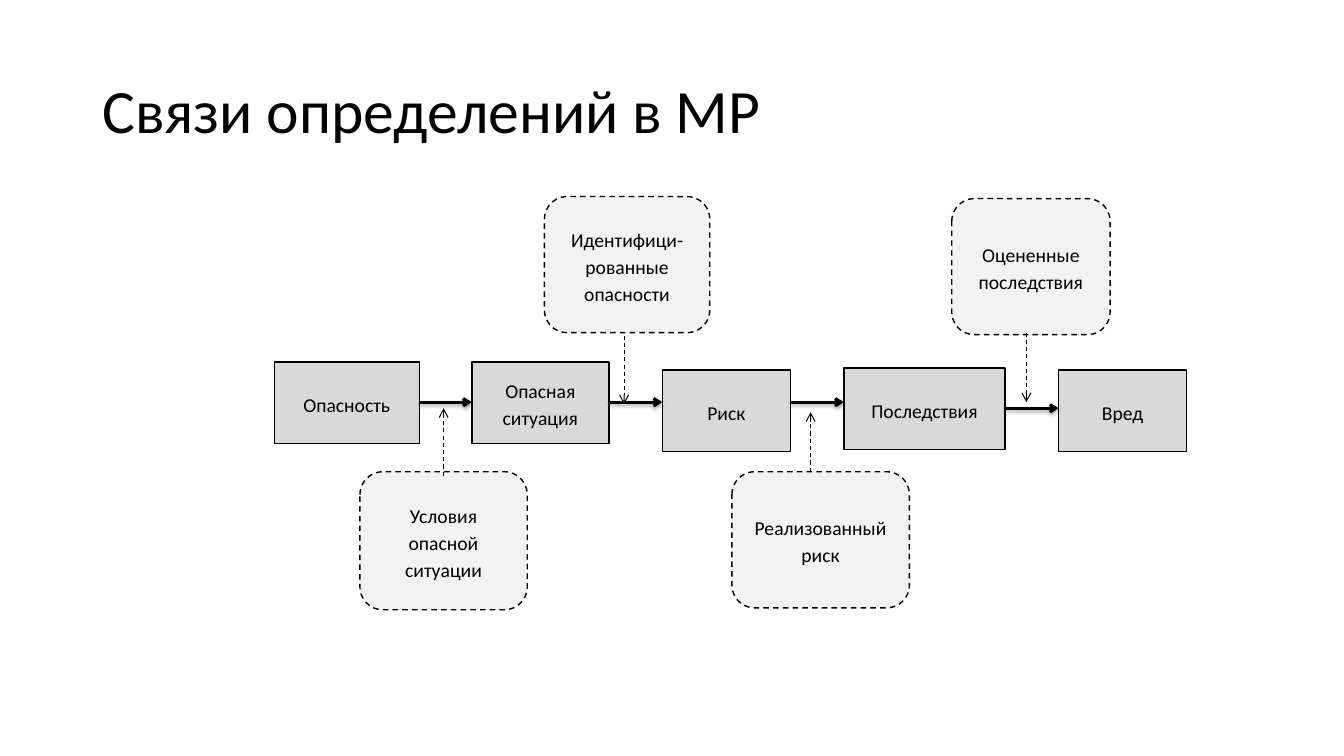
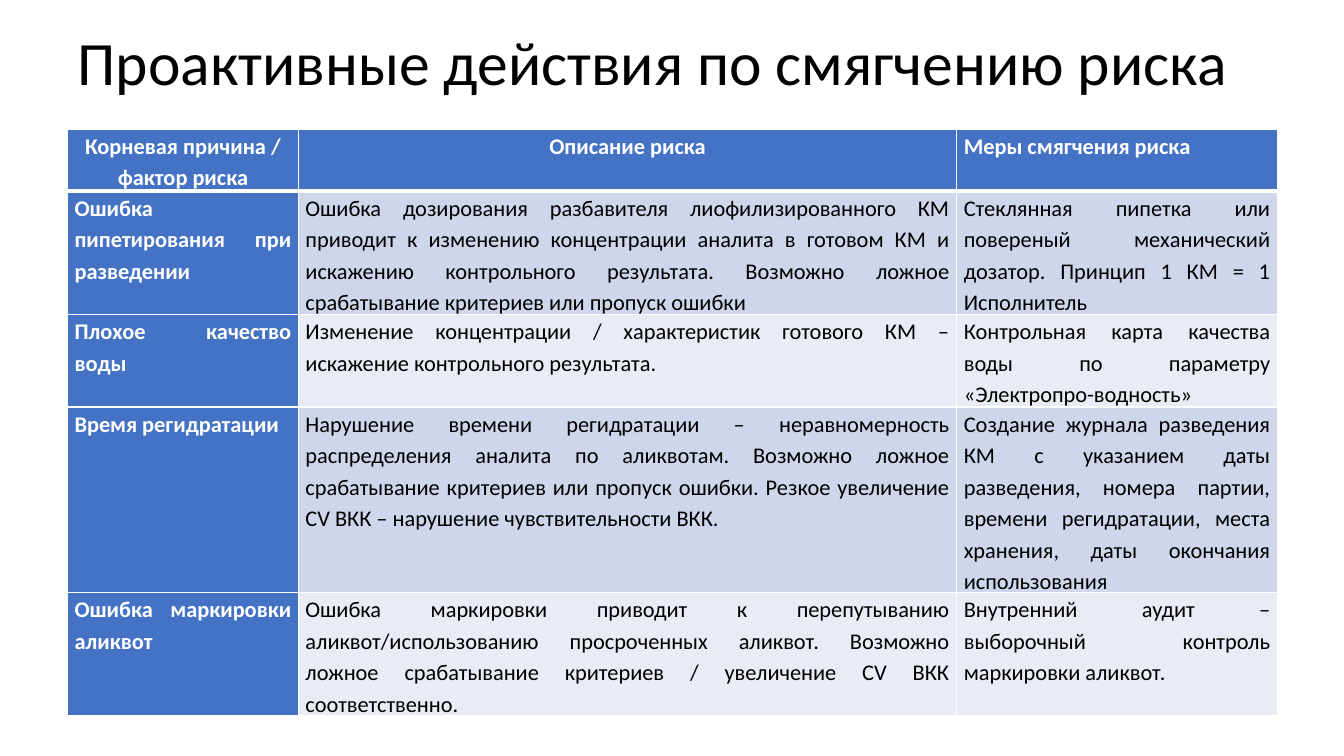
"""Build two slides on risk management: a concept diagram and a mitigation table."""
from itertools import pairwise

from lxml import etree
from pptx import Presentation
from pptx.dml.color import RGBColor
from pptx.enum.dml import MSO_LINE
from pptx.enum.shapes import MSO_CONNECTOR, MSO_SHAPE
from pptx.enum.text import MSO_ANCHOR, PP_ALIGN
from pptx.oxml.ns import qn
from pptx.util import Emu, Pt

RECT, ROUND = MSO_SHAPE.RECTANGLE, MSO_SHAPE.ROUNDED_RECTANGLE
STRAIGHT, DASH = MSO_CONNECTOR.STRAIGHT, MSO_LINE.DASH
MIDDLE, CENTER, JUSTIFY = MSO_ANCHOR.MIDDLE, PP_ALIGN.CENTER, PP_ALIGN.JUSTIFY

FONT = "Calibri"
BLACK, WHITE = "000000", "FFFFFF"
STEP_FILL, NOTE_FILL = "D9D9D9", "F2F2F2"
HEAD_FILL, BANDS = "4472C4", ("CFD5EA", "E9EBF5")

STEP_HEIGHT = 81
STEPS = [
    ("Опасность", 272, 359, 144),
    ("Опасная ситуация", 468, 359, 136),
    ("Риск", 657, 367, 127),
    ("Последствия", 837, 365, 160),
    ("Вред", 1050, 367, 127),
]
FLOW_Y = (399, 399, 399, 405)
NOTES = [
    ("Условия опасной ситуации", (357, 468, 166, 137), (440, 472, 405)),
    ("Идентифици-рованные опасности", (540, 195, 164, 135), (619, 333, 401)),
    ("Реализованный риск", (726, 468, 176, 135), (804, 468, 409)),
    ("Оцененные последствия", (944, 197, 157, 135), (1018, 330, 399)),
]

COLUMNS = (229, 653, 318)
ROW_HEIGHTS = (60, 121, 91, 183, 121)
RISKS = [
    ("Корневая причина / фактор риска", "Описание риска", "Меры смягчения риска"),
    ("Ошибка пипетирования при разведении",
     "Ошибка дозирования разбавителя лиофилизированного КМ приводит к изменению "
     "концентрации аналита в готовом КМ и искажению контрольного результата. "
     "Возможно ложное срабатывание критериев или пропуск ошибки",
     "Стеклянная пипетка или повереный механический дозатор. "
     "Принцип 1 КМ = 1 Исполнитель"),
    ("Плохое качество воды",
     "Изменение концентрации / характеристик готового КМ – искажение "
     "контрольного результата.",
     "Контрольная карта качества воды по параметру «Электропро-водность»"),
    ("Время регидратации",
     "Нарушение времени регидратации – неравномерность распределения аналита по "
     "аликвотам. Возможно ложное срабатывание критериев или пропуск ошибки. "
     "Резкое увеличение CV ВКК – нарушение чувствительности ВКК.",
     "Создание журнала разведения КМ с указанием даты разведения, номера партии, "
     "времени регидратации, места хранения, даты окончания использования"),
    ("Ошибка маркировки аликвот",
     "Ошибка маркировки приводит к перепутыванию аликвот/использованию "
     "просроченных аликвот. Возможно ложное срабатывание критериев / увеличение "
     "CV ВКК соответственно.",
     "Внутренний аудит – выборочный контроль маркировки аликвот."),
]


def px(n):
    """Turn px, 100 to the inch, into EMU."""
    return Emu(n * 9144)


def rgb(color):
    """Turn a hex string into a colour."""
    return RGBColor.from_string(color)


def sub(parent, tag, **attrs):
    """Append a drawing element with attributes and return it."""
    return etree.SubElement(parent, qn(tag), {k: str(v) for k, v in attrs.items()})


def write(tf, text, size, color=BLACK, align=None, spacing=1.15, bold=False):
    """Write one paragraph into a text frame and return it."""
    tf.word_wrap = True
    p = tf.paragraphs[0]
    p.text = text
    p.alignment = align
    p.line_spacing = spacing
    p.font.name, p.font.size, p.font.bold = FONT, Pt(size), bold
    p.font.color.rgb = rgb(color)
    return p


def add_title(slide, text, *box):
    """Add a slide title."""
    tf = slide.shapes.add_textbox(*map(px, box)).text_frame
    tf.vertical_anchor = MIDDLE
    write(tf, text, 44, spacing=0.9)


def add_box(slide, shape, text, box, fill, dash=None):
    """Add an outlined box with centred text."""
    sp = slide.shapes.add_shape(shape, *map(px, box))
    sp.shadow.inherit = False
    sp.fill.solid()
    sp.fill.fore_color.rgb = rgb(fill)
    sp.line.color.rgb = rgb(BLACK)
    sp.line.width = Pt(1)
    sp.line.dash_style = dash
    sp.text_frame.vertical_anchor = MIDDLE
    write(sp.text_frame, text, 14, align=CENTER)


def add_arrow(slide, x1, y1, x2, y2, width, dash=None, shadow=False):
    """Add a straight arrow, with a soft shadow if wanted."""
    cxn = slide.shapes.add_connector(STRAIGHT, *map(px, (x1, y1, x2, y2)))
    cxn.line.color.rgb = rgb(BLACK)
    cxn.line.width = Pt(width)
    cxn.line.dash_style = dash
    sub(cxn.line._get_or_add_ln(), "a:tailEnd", type="arrow")
    effects = sub(cxn._element.spPr, "a:effectLst")
    if shadow:
        outer = sub(effects, "a:outerShdw", blurRad=Pt(3.1), dist=Pt(1.6),
                    dir=5400000, rotWithShape=0)
        sub(sub(outer, "a:srgbClr", val=BLACK), "a:alpha", val=38000)


def style_cell(cell, fill, bottom):
    """Set the margins, white borders and fill of a table cell."""
    cell.margin_left = cell.margin_right = px(7)
    cell.margin_top = cell.margin_bottom = 0
    tc_pr = cell._tc.get_or_add_tcPr()
    for side, width in (("L", 1), ("R", 1), ("T", 1), ("B", bottom)):
        ln = sub(tc_pr, f"a:ln{side}", w=Pt(width))
        sub(sub(ln, "a:solidFill"), "a:srgbClr", val=WHITE)
    cell.fill.solid()
    cell.fill.fore_color.rgb = rgb(fill)


def add_risk_table(slide, left, top):
    """Add the table with a blue header row and first column."""
    table = slide.shapes.add_table(
        len(RISKS), len(COLUMNS), px(left), px(top),
        px(sum(COLUMNS)), px(sum(ROW_HEIGHTS))).table
    for column, width in zip(table.columns, COLUMNS):
        column.width = px(width)
    for i, (row, height, texts) in enumerate(zip(table.rows, ROW_HEIGHTS, RISKS)):
        row.height = px(height)
        for j, (cell, text) in enumerate(zip(row.cells, texts)):
            head = i == 0 or j == 0
            style_cell(cell, HEAD_FILL if head else BANDS[(i - 1) % 2],
                       3 if i == 0 else 1)
            align = CENTER if i == 0 and j < 2 else JUSTIFY
            p = write(cell.text_frame, text, 16, WHITE if head else BLACK,
                      align, bold=head)
            p.space_after = Pt(10)


def add_diagram(slide):
    """Add the chain of steps, the arrows between them and the dashed notes."""
    for text, x, y, width in STEPS:
        add_box(slide, RECT, text, (x, y, width, STEP_HEIGHT), STEP_FILL)
    for (start, end), y in zip(pairwise(STEPS), FLOW_Y):
        add_arrow(slide, start[1] + start[3], y, end[1], y, 2, shadow=True)
    for text, box, (x, y1, y2) in NOTES:
        add_box(slide, ROUND, text, box, NOTE_FILL, DASH)
        add_arrow(slide, x, y1, x, y2, 0.75, DASH)


def main():
    """Build and save the presentation."""
    prs = Presentation()
    prs.slide_width, prs.slide_height = px(1333), px(750)
    blank = prs.slide_layouts[6]

    s = prs.slides.add_slide(blank)
    add_title(s, "Связи определений в МР", 92, 40, 1150, 145)
    add_diagram(s)

    s = prs.slides.add_slide(blank)
    add_title(s, "Проактивные действия по смягчению риска", 67, 3, 1200, 125)
    add_risk_table(s, 67, 128)

    prs.save("out.pptx")


if __name__ == "__main__":
    main()
